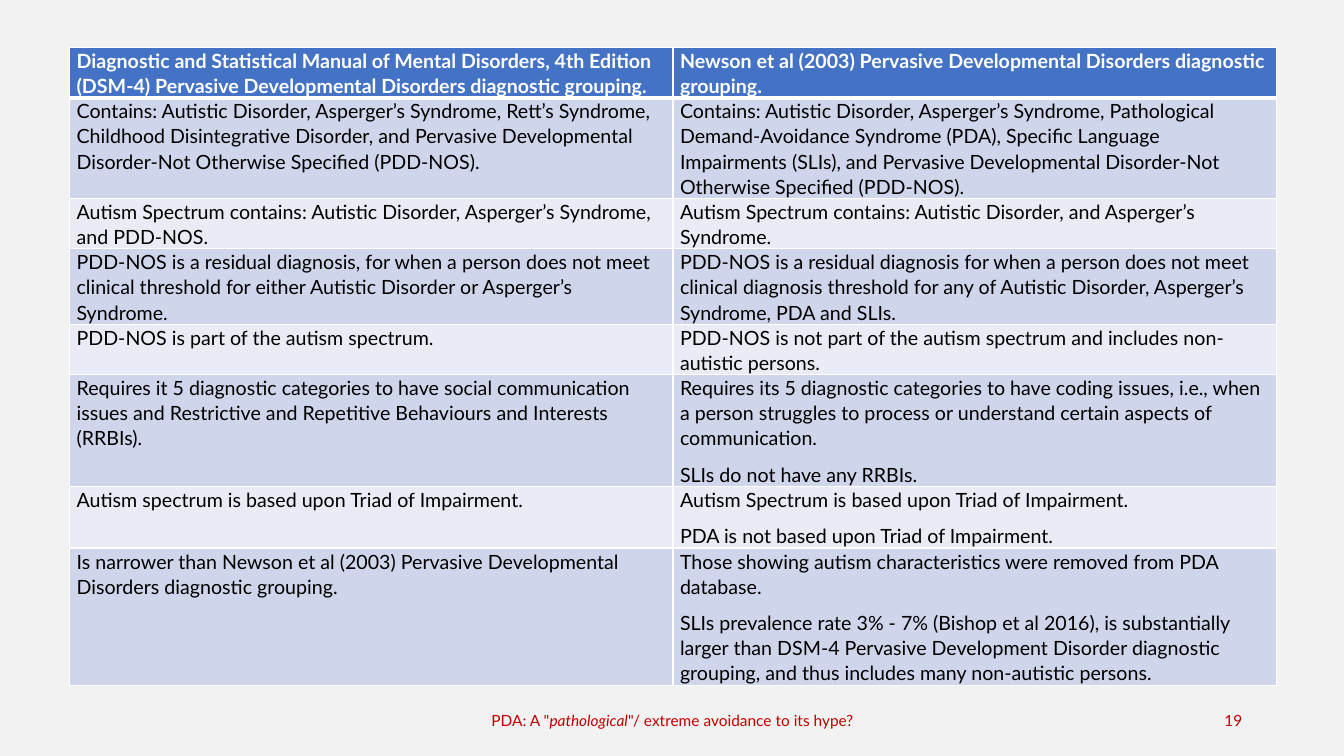
from lxml.etree import SubElement
from pptx import Presentation
from pptx.dml.color import RGBColor
from pptx.enum.text import MSO_ANCHOR as Anchor, PP_ALIGN as Align
from pptx.oxml.ns import qn
from pptx.util import Inches, Pt

HEADINGS = (
    "Diagnostic and Statistical Manual of Mental Disorders, 4th Edition (DSM-4) "
    "Pervasive Developmental Disorders diagnostic grouping.",
    "Newson et al (2003) Pervasive Developmental Disorders diagnostic grouping.",
)
# Each row pairs the DSM-4 paragraphs with the Newson paragraphs.
COMPARISONS = [
    (["Contains: Autistic Disorder, Asperger’s Syndrome, Rett’s Syndrome, Childhood "
      "Disintegrative Disorder, and Pervasive Developmental Disorder-Not Otherwise "
      "Specified (PDD-NOS)."],
     ["Contains: Autistic Disorder, Asperger’s Syndrome, Pathological Demand-Avoidance "
      "Syndrome (PDA), Specific Language Impairments (SLIs), and Pervasive Developmental "
      "Disorder-Not Otherwise Specified (PDD-NOS)."]),
    (["Autism Spectrum contains: Autistic Disorder, Asperger’s Syndrome, and PDD-NOS."],
     ["Autism Spectrum contains: Autistic Disorder, and Asperger’s Syndrome."]),
    (["PDD-NOS is a residual diagnosis, for when a person does not meet clinical "
      "threshold for either Autistic Disorder or Asperger’s Syndrome."],
     ["PDD-NOS is a residual diagnosis for when a person does not meet clinical diagnosis "
      "threshold for any of Autistic Disorder, Asperger’s Syndrome, PDA and SLIs."]),
    (["PDD-NOS is part of the autism spectrum."],
     ["PDD-NOS is not part of the autism spectrum and includes non-autistic persons."]),
    (["Requires it 5 diagnostic categories to have social communication issues and "
      "Restrictive and Repetitive Behaviours and Interests (RRBIs)."],
     ["Requires its 5 diagnostic categories to have coding issues, i.e., when a person "
      "struggles to process or understand certain aspects of communication.",
      "SLIs do not have any RRBIs."]),
    (["Autism spectrum is based upon Triad of Impairment."],
     ["Autism Spectrum is based upon Triad of Impairment.",
      "PDA is not based upon Triad of Impairment."]),
    (["Is narrower than Newson et al (2003) Pervasive Developmental Disorders "
      "diagnostic grouping."],
     ["Those showing autism characteristics were removed from PDA database.",
      "SLIs prevalence rate 3% - 7% (Bishop et al 2016), is substantially larger than "
      "DSM-4 Pervasive Development Disorder diagnostic grouping, and thus includes many "
      "non-autistic persons."]),
]


def color(hex_code):
    return RGBColor.from_string(hex_code)


class ComparisonSlide:
    FONT = "Lato"
    BACKGROUND, FOOTER, WHITE, BLACK = "F2F2F2", "C00000", "FFFFFF", "000000"
    HEADER, BANDS = "4472C4", ("E9EBF5", "CFD5EA")

    def __init__(self, deck):
        self.slide = deck.slides.add_slide(deck.slide_layouts[6])
        fill = self.slide.background.fill
        fill.solid()
        fill.fore_color.rgb = color(self.BACKGROUND)

    def run(self, paragraph, text, size, hex_code, bold=False, italic=False):
        run = paragraph.add_run()
        run.text = text
        font = run.font
        font.name, font.size = self.FONT, Pt(size)
        font.bold, font.italic = bold, italic
        font.color.rgb = color(hex_code)

    def footer(self, left, width, align, runs):
        """Add a footer line from (text, italic) pairs."""
        box = self.slide.shapes.add_textbox(
            Inches(left), Inches(6.95), Inches(width), Inches(0.4))
        frame = box.text_frame
        frame.word_wrap = True
        frame.vertical_anchor = Anchor.MIDDLE
        paragraph = frame.paragraphs[0]
        paragraph.alignment = align
        for text, italic in runs:
            self.run(paragraph, text, 11, self.FOOTER, italic=italic)

    def borders(self, cell, bottom):
        properties = cell._tc.get_or_add_tcPr()
        for side, width in (("L", 1), ("R", 1), ("T", 1), ("B", bottom)):
            line = SubElement(properties, qn(f"a:ln{side}"), w=str(Pt(width)))
            solid = SubElement(line, qn("a:solidFill"))
            SubElement(solid, qn("a:srgbClr"), val=self.WHITE)

    def cell(self, cell, paragraphs, fill, text_color, bold, bottom):
        self.borders(cell, bottom)
        cell.fill.solid()
        cell.fill.fore_color.rgb = color(fill)
        cell.margin_left = cell.margin_right = Inches(0.07)
        cell.margin_top = cell.margin_bottom = 0
        for index, text in enumerate(paragraphs):
            frame = cell.text_frame
            paragraph = frame.add_paragraph() if index else frame.paragraphs[0]
            paragraph.line_spacing = 1.07
            paragraph.space_after = Pt(8)
            self.run(paragraph, text, 14, text_color, bold)

    def table(self, headings, comparisons):
        rows = [[[heading] for heading in headings], *comparisons]
        frame = self.slide.shapes.add_table(
            len(rows), len(headings), Inches(0.69), Inches(0.47), Inches(11.97), Inches(6.43))
        table = frame.table
        for row_index, row in enumerate(rows):
            table.rows[row_index].height = Inches(0.41)
            is_header = row_index == 0
            fill = self.HEADER if is_header else self.BANDS[row_index % 2]
            text_color = self.WHITE if is_header else self.BLACK
            for column, paragraphs in enumerate(row):
                self.cell(table.cell(row_index, column), paragraphs, fill, text_color,
                          bold=is_header, bottom=3 if is_header else 1)
        frame.height = Inches(6.43)


def main():
    deck = Presentation()
    deck.slide_width, deck.slide_height = Inches(13.33), Inches(7.5)
    page = ComparisonSlide(deck)
    page.footer(4.42, 4.5, Align.CENTER, [
        ('PDA: A "', False), ("pathological", True),
        ('"/ extreme avoidance to its hype?', False)])
    page.footer(9.42, 3, Align.RIGHT, [("19", False)])
    page.table(HEADINGS, COMPARISONS)
    deck.save("out.pptx")


if __name__ == "__main__":
    main()
